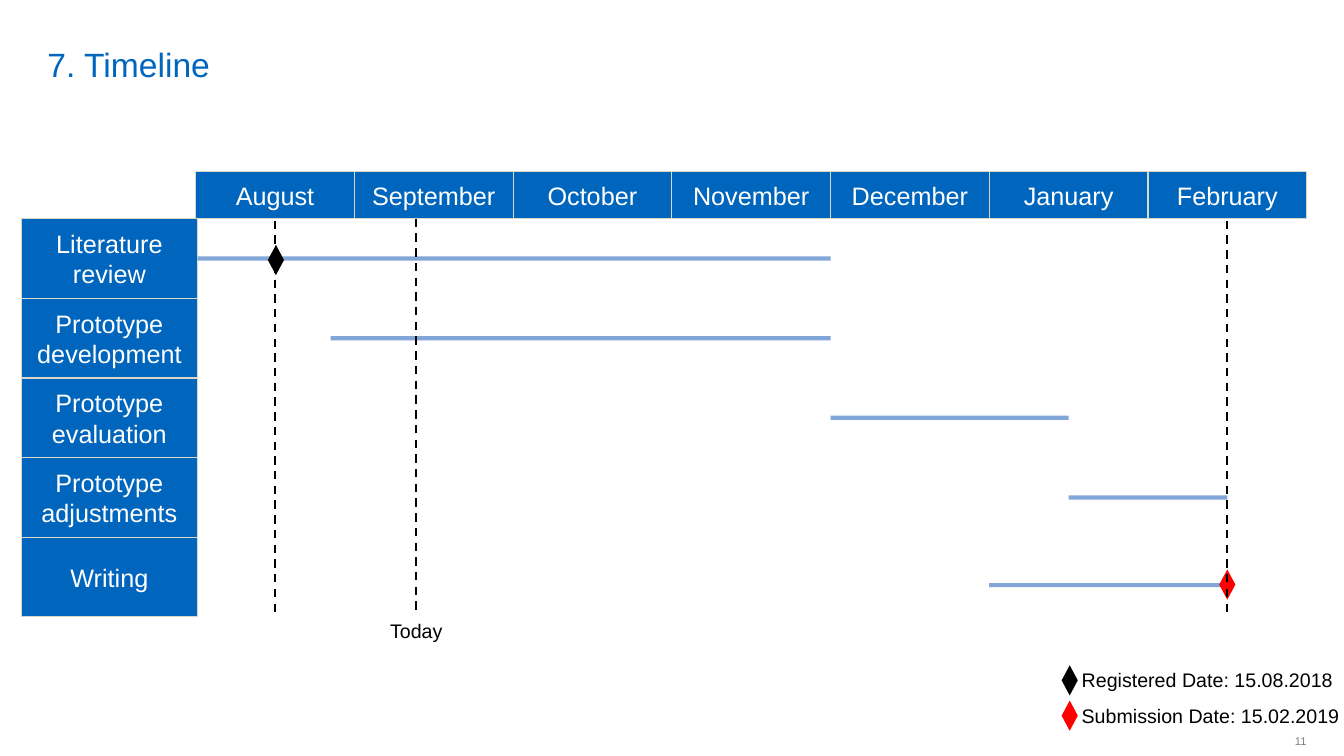
from lxml.etree import SubElement
from pptx import Presentation
from pptx.dml.color import RGBColor
from pptx.enum.dml import MSO_LINE
from pptx.enum.shapes import MSO_CONNECTOR, MSO_SHAPE
from pptx.enum.text import MSO_ANCHOR, MSO_AUTO_SIZE, PP_ALIGN
from pptx.oxml.ns import qn
from pptx.util import Inches, Pt

BLUE = RGBColor(0x00, 0x65, 0xBD)
BAR_BLUE = RGBColor(0x07, 0x4F, 0xB0)
BORDER = RGBColor(0xDA, 0xD7, 0xCB)
BLACK = RGBColor(0x00, 0x00, 0x00)
RED = RGBColor(0xFF, 0x00, 0x00)
WHITE = RGBColor(0xFF, 0xFF, 0xFF)
GRAY = RGBColor(0x80, 0x80, 0x80)

MONTHS = ["August", "September", "October", "November", "December", "January", "February"]
# Task, first and last point in months from the start of August, drop below the row middle
TASKS = [
    ("Literature review", 0, 4, 0),
    ("Prototype development", 0.85, 4, 0),
    ("Prototype evaluation", 4, 5.5, 0),
    ("Prototype adjustments", 5.5, 6.5, 0),
    ("Writing", 5, 6.5, 0.08),
]
REGISTERED, TODAY, SUBMISSION = 0.5, 1.39, 6.5
HEADER_HEIGHT, ROW_HEIGHT = 0.47, 0.79
LABEL_WIDTH, LABEL_OVERLAP = 1.75, 0.02


def write(shape, text, size=14, color=BLACK, align=PP_ALIGN.LEFT,
          anchor=MSO_ANCHOR.TOP, wrap=False):
    frame = shape.text_frame
    frame.text = text
    frame.word_wrap = wrap
    frame.auto_size = MSO_AUTO_SIZE.NONE
    frame.vertical_anchor = anchor
    para = frame.paragraphs[0]
    para.alignment = align
    para.font.name = "Arial"
    para.font.size = Pt(size)
    para.font.color.rgb = color
    return frame


def add_text(page, left, top, width, height, text, **text_format):
    box = page.shapes.add_textbox(Inches(left), Inches(top), Inches(width), Inches(height))
    return write(box, text, **text_format)


def add_cell(page, left, top, width, height, text):
    cell = page.shapes.add_shape(
        MSO_SHAPE.RECTANGLE, Inches(left), Inches(top), Inches(width), Inches(height))
    cell.shadow.inherit = False
    cell.fill.solid()
    cell.fill.fore_color.rgb = BLUE
    cell.line.color.rgb = BORDER
    cell.line.width = Pt(0.75)
    write(cell, text, size=18, color=WHITE, align=PP_ALIGN.CENTER,
          anchor=MSO_ANCHOR.MIDDLE, wrap=True)
    return cell


def add_diamond(page, center_x, center_y, color):
    width, height = 0.16, 0.3
    diamond = page.shapes.add_shape(
        MSO_SHAPE.DIAMOND, Inches(center_x - width / 2), Inches(center_y - height / 2),
        Inches(width), Inches(height))
    diamond.shadow.inherit = False
    diamond.fill.solid()
    diamond.fill.fore_color.rgb = color
    diamond.line.fill.background()


def add_line(page, start_x, start_y, end_x, end_y, color, width):
    line = page.shapes.add_connector(
        MSO_CONNECTOR.STRAIGHT, Inches(start_x), Inches(start_y), Inches(end_x), Inches(end_y))
    line.line.color.rgb = color
    line.line.width = Pt(width)
    SubElement(line._element.spPr, qn("a:effectLst"))
    return line


def add_bar(page, start_x, end_x, y):
    """Draw a half-transparent task bar."""
    bar = add_line(page, start_x, y, end_x, y, BAR_BLUE, 3)
    color = bar._element.spPr.find(".//" + qn("a:srgbClr"))
    SubElement(color, qn("a:alpha"), val="50000")
    return bar


def add_date_line(page, x, top, bottom):
    add_line(page, x, top, x, bottom, BLACK, 1.5).line.dash_style = MSO_LINE.DASH


def add_title(page, left, top, width, height):
    title = page.shapes.title
    title.left, title.top = Inches(left), Inches(top)
    title.width, title.height = Inches(width), Inches(height)
    frame = write(title, "7. Timeline", size=24, color=BLUE,
                  anchor=MSO_ANCHOR.BOTTOM, wrap=True)
    frame.margin_top = frame.margin_bottom = 0


def add_timeline(page, left, top, width):
    """Draw the chart; the box begins at the left edge of the task labels."""
    months_left = left + LABEL_WIDTH - LABEL_OVERLAP
    month_width = (left + width - months_left) / len(MONTHS)
    rows_top = top + HEADER_HEIGHT
    rows_bottom = rows_top + len(TASKS) * ROW_HEIGHT

    def month_x(months):
        return months_left + months * month_width

    for index, month in enumerate(MONTHS):
        add_cell(page, month_x(index), top, month_width, HEADER_HEIGHT, month)
    for index, (task, start, end, drop) in enumerate(TASKS):
        row_top = rows_top + index * ROW_HEIGHT
        middle = row_top + ROW_HEIGHT / 2
        label = add_cell(page, left, row_top, LABEL_WIDTH, ROW_HEIGHT, task)
        bar = add_bar(page, month_x(start), month_x(end), middle + drop)
        if start == 0:
            bar.begin_connect(label, 3)

    add_diamond(page, month_x(REGISTERED) + 0.01, rows_top + 0.41, BLACK)
    add_diamond(page, month_x(SUBMISSION), rows_bottom - 0.32, RED)
    add_date_line(page, month_x(TODAY), rows_top, rows_bottom - 0.03)
    add_text(page, month_x(TODAY) - 0.36, rows_bottom - 0.03, 0.72, 0.34, "Today",
             align=PP_ALIGN.CENTER)
    for months in (REGISTERED, SUBMISSION):
        add_date_line(page, month_x(months), rows_top + 0.02, rows_bottom - 0.01)


def add_legend(page, left, top, width):
    entries = [("Registered Date: 15.08.2018", BLACK), ("Submission Date: 15.02.2019", RED)]
    for index, (text, color) in enumerate(entries):
        entry_top = top + index * 0.35
        add_diamond(page, left + 0.08, entry_top + 0.17, color)
        add_text(page, left + 0.1, entry_top, width - 0.1, 0.34, text)


def add_page_number(page, left, top, width, height):
    frame = add_text(page, left, top, width, height, "11", size=8, color=GRAY,
                     align=PP_ALIGN.RIGHT, anchor=MSO_ANCHOR.MIDDLE)
    frame.margin_right = 0


def main():
    deck = Presentation()
    deck.slide_width, deck.slide_height = Inches(13.33), Inches(7.5)
    page = deck.slides.add_slide(deck.slide_layouts[5])
    add_title(page, 0.37, 0.05, 11.58, 0.79)
    add_page_number(page, 12.6, 7.19, 0.36, 0.32)
    add_timeline(page, 0.21, 1.7, 12.75)
    add_legend(page, 10.53, 6.58, 2.8)
    deck.save("out.pptx")


if __name__ == "__main__":
    main()
